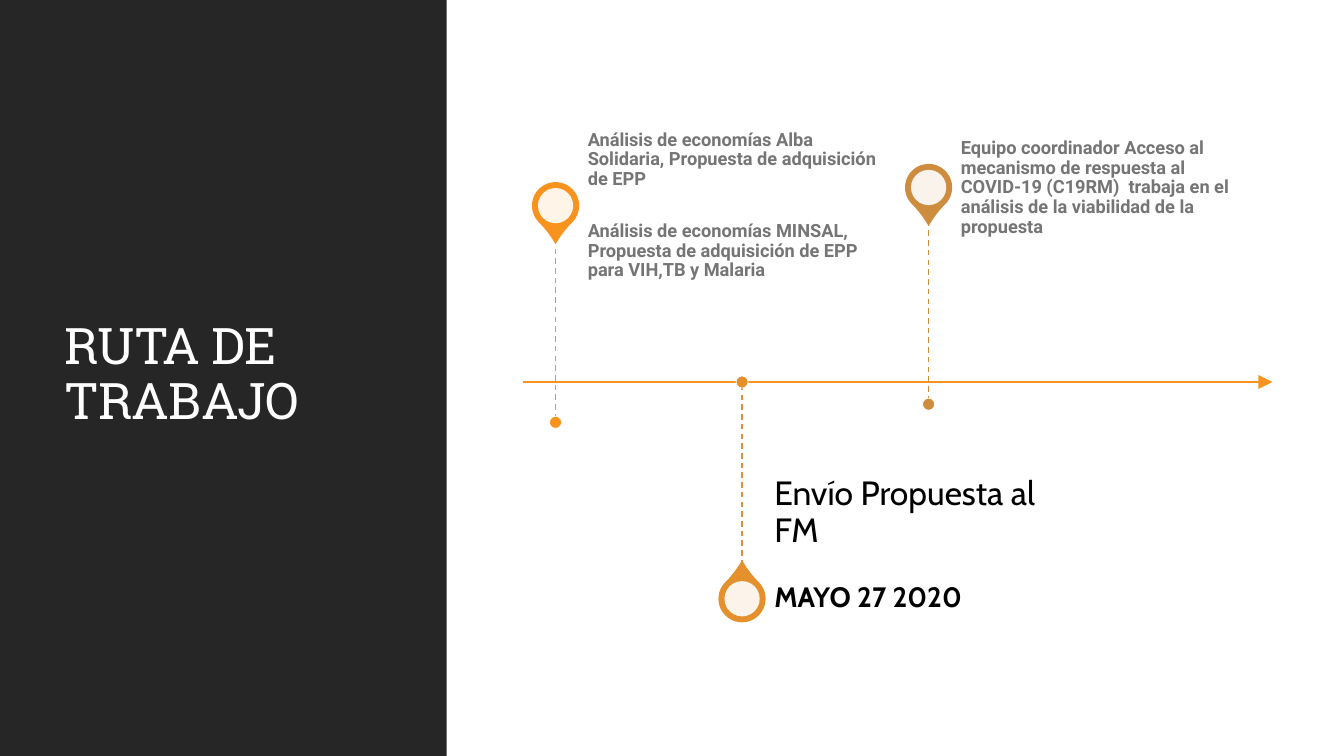
from pptx import Presentation
from pptx.dml.color import RGBColor
from pptx.enum.dml import MSO_LINE
from pptx.enum.shapes import MSO_CONNECTOR, MSO_SHAPE
from pptx.enum.text import MSO_ANCHOR
from pptx.oxml.ns import qn
from pptx.util import Inches, Pt
from lxml.etree import SubElement

deck = Presentation()
deck.slide_width, deck.slide_height = Inches(13.33), Inches(7.5)
page = deck.slides.add_slide(deck.slide_layouts[6])


def color(value):
    return RGBColor.from_string(value)


def add_text(paragraphs, left, top, width, height, size=13, font="Roboto",
             fill="757575", bold=False, anchor=MSO_ANCHOR.MIDDLE,
             insets=(0, 0, 0.09, 0), gap=0, tracking=0):
    box = page.shapes.add_textbox(Inches(left), Inches(top), Inches(width), Inches(height))
    frame = box.text_frame
    frame.word_wrap = True
    frame.vertical_anchor = anchor
    frame.margin_left, frame.margin_top, frame.margin_right, frame.margin_bottom = map(Inches, insets)
    for index, text in enumerate(paragraphs):
        para = frame.paragraphs[0] if index == 0 else frame.add_paragraph()
        para.line_spacing = 0.9
        para.space_before = Pt(gap if index else 0)
        span = para.add_run()
        span.text = text
        span.font.size = Pt(size)
        span.font.name = font
        span.font.bold = bold
        span.font.color.rgb = color(fill)
        if tracking:
            span.font._element.set("spc", str(tracking))


# Title panel
panel = page.shapes.add_shape(MSO_SHAPE.RECTANGLE, 0, 0, Inches(4.43), Inches(7.5))
panel.shadow.inherit = False
panel.fill.solid()
panel.fill.fore_color.rgb = color("262626")
panel.line.fill.background()
add_text(["RUTA DE TRABAJO"], 0.54, 0.57, 3.37, 6.31, size=36, font="Roboto Slab",
         fill="FFFFFF", insets=(0.1, 0.05, 0.1, 0.05), tracking=-50)

# Timeline axis, then a dashed stem for each milestone:
# x, pin centre, direction of the stem (1 down, -1 up), colour
axis_y = 3.79
milestones = [
    (5.51, 2.04, 1, "F8931D"),
    (7.36, 5.94, -1, "E3902D"),
    (9.21, 1.86, 1, "CE8D3E"),
]
lines = [(5.19, axis_y, 12.62, axis_y, "F8931D", 1.5)]
lines += [(x, y + 0.33 * way, x, y + 2.15 * way, hue, 1) for x, y, way, hue in milestones]
for x1, y1, x2, y2, hue, weight in lines:
    line = page.shapes.add_connector(MSO_CONNECTOR.STRAIGHT, Inches(x1), Inches(y1),
                                     Inches(x2), Inches(y2))
    line.line.color.rgb = color(hue)
    line.line.width = Pt(weight)
    if x1 == x2:
        line.line.dash_style = MSO_LINE.DASH
    else:
        SubElement(line.line._get_or_add_ln(), qn("a:tailEnd"), type="triangle", w="lg", len="lg")
    SubElement(line._element.spPr, qn("a:effectLst"))

# Pins with a pale centre, and a dot at the end of each stem
for x, y, way, hue in milestones:
    marks = [
        (MSO_SHAPE.TEAR, y, 0.45, hue, hue, 1.25),
        (MSO_SHAPE.OVAL, y, 0.35, "FFFFFF", None, 0),
        (MSO_SHAPE.OVAL, y + 2.15 * way, 0.12, hue, "FFFFFF", 0.5),
    ]
    for kind, middle, size, fill, outline, weight in marks:
        mark = page.shapes.add_shape(kind, Inches(x - size / 2), Inches(middle - size / 2),
                                     Inches(size), Inches(size))
        mark.shadow.inherit = False
        mark.fill.solid()
        mark.fill.fore_color.rgb = color(fill)
        if outline:
            mark.line.color.rgb = color(outline)
            mark.line.width = Pt(weight)
        else:
            mark.line.fill.background()
            tint = mark._element.spPr.find(qn("a:solidFill"))[0]
            SubElement(tint, qn("a:alpha"), val="90000")
        if kind == MSO_SHAPE.TEAR:
            mark.adjustments[0] = 1.15
            mark.rotation = 135 if way == 1 else 315

# Milestone texts, to the right of their pins
text_x = [x + 0.32 for x, *_ in milestones]
add_text(["Análisis de economías Alba Solidaria, Propuesta de adquisición de EPP",
          "Análisis de economías MINSAL, Propuesta de adquisición de EPP para VIH,TB y Malaria"],
         text_x[0], 1.21, 3.08, 1.66, bold=True, gap=23)
add_text(["Envío Propuesta al FM"], text_x[1], axis_y, 3.08, 1.83, size=24, font="Cabin",
         fill="000000", anchor=MSO_ANCHOR.BOTTOM, insets=(0, 0.25, 0, 0.17))
add_text(["MAYO 27 2020"], text_x[1], 5.62, 3.08, 0.64, size=20, font="Cabin",
         fill="000000", bold=True, insets=(0, 0, 0.14, 0))
add_text(["Equipo coordinador Acceso al mecanismo de respuesta al COVID-19 (C19RM)  "
          "trabaja en el análisis de la viabilidad de la propuesta"],
         text_x[2], 1.16, 3.08, 1.41, bold=True)

deck.save("out.pptx")
